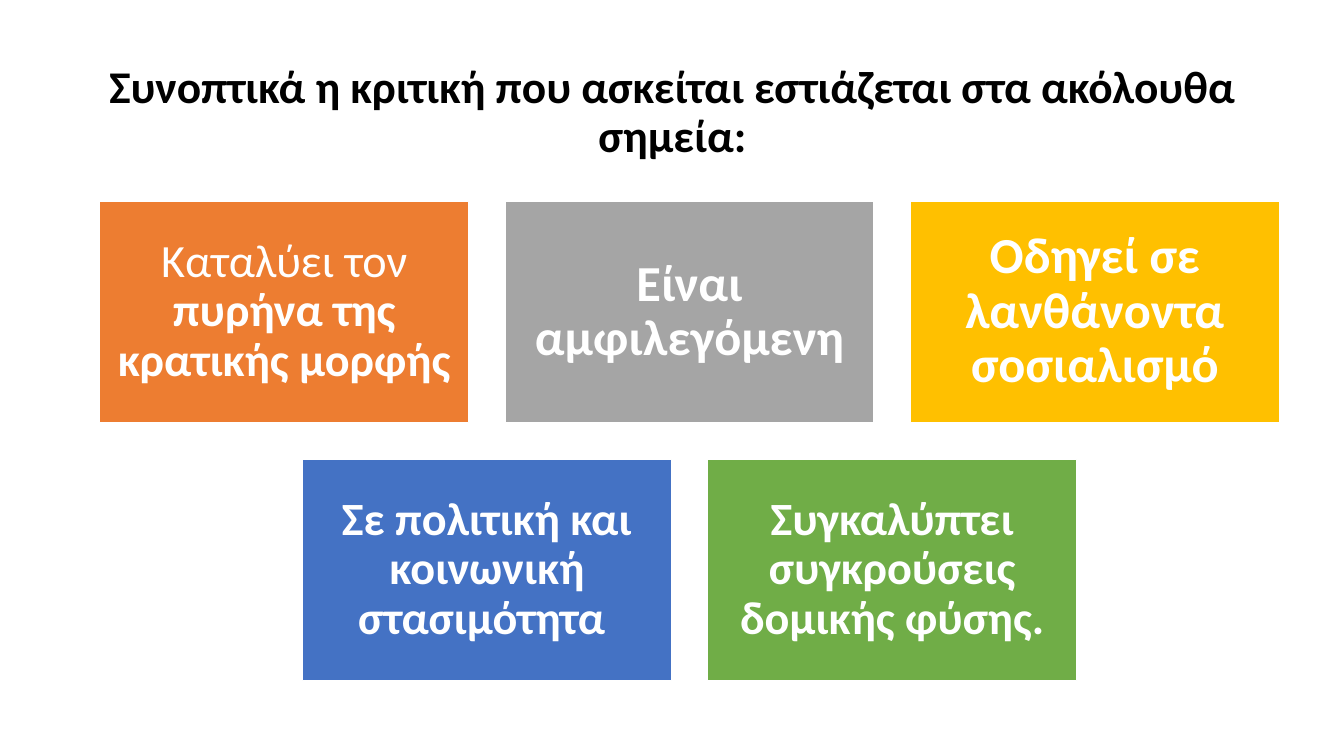
from dataclasses import dataclass

from pptx import Presentation
from pptx.dml.color import RGBColor
from pptx.enum.shapes import MSO_SHAPE as Preset
from pptx.enum.text import MSO_ANCHOR as Anchor, MSO_AUTO_SIZE as AutoSize, PP_ALIGN as Align
from pptx.slide import Slide
from pptx.text.text import TextFrame
from pptx.util import Inches, Pt

BLACK = RGBColor(0x00, 0x00, 0x00)
WHITE = RGBColor(0xFF, 0xFF, 0xFF)
ORANGE = RGBColor(0xED, 0x7D, 0x31)
GREY = RGBColor(0xA5, 0xA5, 0xA5)
GOLD = RGBColor(0xFF, 0xC0, 0x00)
BLUE = RGBColor(0x44, 0x72, 0xC4)
GREEN = RGBColor(0x70, 0xAD, 0x47)

FONT = "Calibri"
GRID_LEFT, GRID_TOP = 0.99, 2.0
CARD_WIDTH, CARD_HEIGHT = 3.66, 2.19
COLUMN_STEP, ROW_STEP = 4.02, 2.56
COLUMNS = 3


@dataclass(frozen=True)
class Phrase:
    text: str
    bold: bool = True


@dataclass(frozen=True)
class Criticism:
    phrases: tuple[Phrase, ...]
    fill: RGBColor
    size: float = 33
    inset: float = 0.14


HEADING = (Phrase("Συνοπτικά η κριτική που ασκείται εστιάζεται στα ακόλουθα σημεία:"),)

CRITICISM_ROWS = (
    (
        Criticism((Phrase("Καταλύει τον ", False), Phrase("πυρήνα της κρατικής μορφής")), ORANGE),
        Criticism((Phrase("Είναι αμφιλεγόμενη"),), GREY, 36, 0.15),
        Criticism((Phrase("Οδηγεί σε λανθάνοντα σοσιαλισμό"),), GOLD, 36, 0.15),
    ),
    (
        Criticism((Phrase("Σε πολιτική και κοινωνική στασιμότητα "),), BLUE),
        Criticism((Phrase("Συγκαλύπτει συγκρούσεις δομικής φύσης."),), GREEN),
    ),
)


def write_phrases(frame: TextFrame, phrases: tuple[Phrase, ...], size: float, color: RGBColor) -> None:
    frame.word_wrap = True
    frame.auto_size = AutoSize.NONE
    frame.vertical_anchor = Anchor.MIDDLE
    paragraph = frame.paragraphs[0]
    paragraph.alignment = Align.CENTER
    paragraph.line_spacing = 0.9
    for phrase in phrases:
        run = paragraph.add_run()
        run.text = phrase.text
        run.font.name = FONT
        run.font.size = Pt(size)
        run.font.bold = phrase.bold
        run.font.color.rgb = color


def draw_heading(slide: Slide) -> None:
    heading = slide.shapes.title
    heading.left, heading.top = Inches(0.92), Inches(0.4)
    heading.width, heading.height = Inches(11.5), Inches(1.45)
    write_phrases(heading.text_frame, HEADING, 32.4, BLACK)


def draw_criticism(slide: Slide, criticism: Criticism, column: float, row: int) -> None:
    card = slide.shapes.add_shape(
        Preset.RECTANGLE,
        Inches(GRID_LEFT + column * COLUMN_STEP),
        Inches(GRID_TOP + row * ROW_STEP),
        Inches(CARD_WIDTH),
        Inches(CARD_HEIGHT),
    )
    card.shadow.inherit = False
    card.fill.solid()
    card.fill.fore_color.rgb = criticism.fill
    card.line.color.rgb = WHITE
    card.line.width = Pt(1)
    frame = card.text_frame
    frame.margin_left = frame.margin_right = Inches(criticism.inset)
    frame.margin_top = frame.margin_bottom = Inches(criticism.inset)
    write_phrases(frame, criticism.phrases, criticism.size, WHITE)


def main() -> None:
    deck = Presentation()
    deck.slide_width, deck.slide_height = Inches(13.33), Inches(7.5)
    slide = deck.slides.add_slide(deck.slide_layouts[5])
    draw_heading(slide)
    for row, criticisms in enumerate(CRITICISM_ROWS):
        first_column = (COLUMNS - len(criticisms)) / 2
        for position, criticism in enumerate(criticisms):
            draw_criticism(slide, criticism, first_column + position, row)
    deck.save("out.pptx")


if __name__ == "__main__":
    main()
